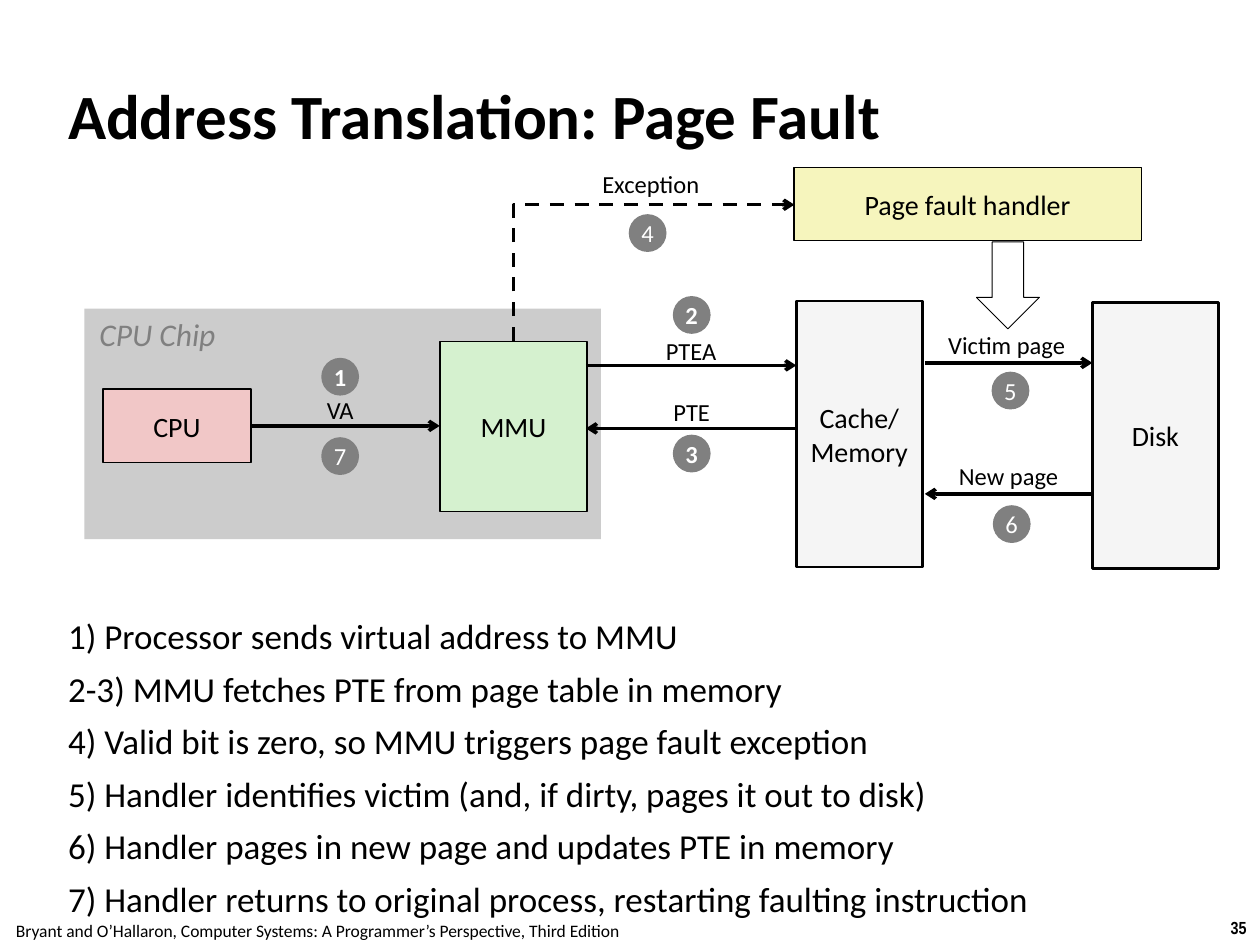
from dataclasses import dataclass
from typing import Optional

import lxml.etree
import pptx
import pptx.dml.color
import pptx.enum.dml
import pptx.enum.shapes
import pptx.enum.text
import pptx.oxml.ns
import pptx.shapes.autoshape
import pptx.shapes.connector
import pptx.slide
import pptx.text.text
import pptx.util

Inches = pptx.util.Inches
RGBColor = pptx.dml.color.RGBColor
ShapeType = pptx.enum.shapes.MSO_SHAPE
ConnectorType = pptx.enum.shapes.MSO_CONNECTOR
Anchor = pptx.enum.text.MSO_ANCHOR
Align = pptx.enum.text.PP_ALIGN
qn = pptx.oxml.ns.qn

BLACK = RGBColor(0x00, 0x00, 0x00)
WHITE = RGBColor(0xFF, 0xFF, 0xFF)
GRAY = RGBColor(0x80, 0x80, 0x80)
CHIP_GRAY = RGBColor(0xCC, 0xCC, 0xCC)
MEMORY_GRAY = RGBColor(0xF5, 0xF5, 0xF5)
GREEN = RGBColor(0xD5, 0xF1, 0xCF)
PINK = RGBColor(0xF1, 0xC7, 0xC7)
YELLOW = RGBColor(0xF6, 0xF5, 0xBD)

BADGE_SIZE = 0.3


@dataclass
class Box:
    left: float
    top: float
    width: float
    height: float
    fill: Optional[RGBColor] = None
    line_width: float = 0
    text: str = ""
    kind: ShapeType = ShapeType.RECTANGLE


@dataclass
class Label:
    text: str
    left: float
    top: float
    width: float
    height: float = 0.33
    size: float = 14
    color: RGBColor = BLACK
    font: str = "Calibri"
    bold: bool = False
    italic: bool = False


@dataclass
class Arrow:
    start_x: float
    end_x: float
    y: float


@dataclass
class Badge:
    number: int
    left: float
    top: float
    bold: bool = False


BOXES = [
    Box(0.67, 2.45, 4.1, 1.83, CHIP_GRAY),
    Box(3.49, 2.71, 1.17, 1.35, GREEN, 1, "MMU"),
    Box(6.32, 2.39, 1, 2.11, MEMORY_GRAY, 1.5, "Cache/\nMemory"),
    Box(0.82, 3.09, 1.17, 0.58, PINK, 1, "CPU"),
    Box(8.67, 2.4, 1, 2.11, MEMORY_GRAY, 1.5, "Disk"),
    Box(6.3, 1.33, 2.76, 0.58, YELLOW, 1, "Page fault handler"),
    Box(7.75, 1.92, 0.5, 0.69, None, 0.5, kind=ShapeType.DOWN_ARROW),
]

ARROWS = [
    Arrow(1.99, 3.49, 3.38),
    Arrow(4.65, 6.32, 2.9),
    Arrow(6.32, 4.65, 3.4),
    Arrow(7.34, 8.67, 2.88),
    Arrow(8.67, 7.34, 3.92),
]

LABELS = [
    Label("35", 9.66, 7.23, 0.34, 0.27, 10, font="Arial Narrow", bold=True),
    Label("Bryant and O’Hallaron, Computer Systems: A Programmer’s Perspective, Third Edition",
          -0.02, 7.25, 5.08, 0.27, 10),
    Label("CPU Chip", 0.67, 2.45, 1.16, 0.4, 18, GRAY, italic=True),
    Label("VA", 2.49, 3.09, 0.42),
    Label("PTEA", 5.18, 2.62, 0.61),
    Label("PTE", 5.24, 3.1, 0.5),
    Label("Victim page", 7.41, 2.57, 1.16),
    Label("New page", 7.5, 3.61, 1.01),
    Label("Exception", 4.67, 1.29, 0.99),
]

BADGES = [
    Badge(1, 2.55, 2.84, True),
    Badge(2, 5.34, 2.35, True),
    Badge(3, 5.34, 3.45, True),
    Badge(4, 4.99, 1.7),
    Badge(5, 7.87, 2.95),
    Badge(6, 7.88, 4.01),
    Badge(7, 2.55, 3.47),
]

STEPS = [
    "1) Processor sends virtual address to MMU",
    "2-3) MMU fetches PTE from page table in memory",
    "4) Valid bit is zero, so MMU triggers page fault exception",
    "5) Handler identifies victim (and, if dirty, pages it out to disk)",
    "6) Handler pages in new page and updates PTE in memory",
    "7) Handler returns to original process, restarting faulting instruction",
]


def add_run(paragraph: pptx.text.text._Paragraph, text: str, size: float, color: RGBColor = BLACK,
            bold: bool = False, italic: bool = False, font: str = "Calibri") -> None:
    run = paragraph.add_run()
    run.text = text
    run.font.name = font
    run.font.size = pptx.util.Pt(size)
    run.font.bold = bold
    run.font.italic = italic
    run.font.color.rgb = color


def write_centered(frame: pptx.text.text.TextFrame, text: str, size: float, color: RGBColor = BLACK,
                   bold: bool = False, italic: bool = False, font: str = "Calibri") -> None:
    frame.word_wrap = False
    frame.vertical_anchor = Anchor.MIDDLE
    for index, line in enumerate(text.split("\n")):
        paragraph = frame.add_paragraph() if index else frame.paragraphs[0]
        paragraph.alignment = Align.CENTER
        add_run(paragraph, line, size, color, bold, italic, font)


def add_box(slide: pptx.slide.Slide, box: Box) -> pptx.shapes.autoshape.Shape:
    shape = slide.shapes.add_shape(box.kind, Inches(box.left), Inches(box.top),
                                   Inches(box.width), Inches(box.height))
    shape.shadow.inherit = False
    if box.fill is None:
        shape.fill.background()
    else:
        shape.fill.solid()
        shape.fill.fore_color.rgb = box.fill
    if box.line_width:
        shape.line.color.rgb = BLACK
        shape.line.width = pptx.util.Pt(box.line_width)
    else:
        shape.line.fill.background()
    if box.text:
        write_centered(shape.text_frame, box.text, 16)
    return shape


def add_label(slide: pptx.slide.Slide, label: Label) -> None:
    text_box = slide.shapes.add_textbox(Inches(label.left), Inches(label.top),
                                        Inches(label.width), Inches(label.height))
    write_centered(text_box.text_frame, label.text, label.size, label.color,
                   label.bold, label.italic, label.font)


def add_badge(slide: pptx.slide.Slide, badge: Badge) -> None:
    circle = add_box(slide, Box(badge.left, badge.top, BADGE_SIZE, BADGE_SIZE, GRAY, kind=ShapeType.OVAL))
    write_centered(circle.text_frame, str(badge.number), 14, WHITE, badge.bold)


def add_arrow(slide: pptx.slide.Slide, kind: ConnectorType, start_x: float, start_y: float,
              end_x: float, end_y: float) -> pptx.shapes.connector.Connector:
    connector = slide.shapes.add_connector(kind, Inches(start_x), Inches(start_y),
                                           Inches(end_x), Inches(end_y))
    connector.line.color.rgb = BLACK
    connector.line.width = pptx.util.Pt(2)
    properties = connector._element.spPr
    lxml.etree.SubElement(properties.find(qn("a:ln")), qn("a:tailEnd"), type="arrow")
    lxml.etree.SubElement(properties, qn("a:effectLst"))
    return connector


def add_exception_arrow(slide: pptx.slide.Slide) -> None:
    connector = add_arrow(slide, ConnectorType.ELBOW, 5.73, 3.28, 4.65, 1.05)
    connector.line.dash_style = pptx.enum.dml.MSO_LINE.DASH
    properties = connector._element.spPr
    properties.find(qn("a:prstGeom")).set("prst", "bentConnector2")
    properties.find(qn("a:xfrm")).set("rot", str(90 * 60000))


def prepare_placeholder(placeholder: pptx.shapes.autoshape.Shape, left: float, top: float,
                        width: float, height: float, anchor: Anchor) -> pptx.text.text.TextFrame:
    placeholder.left, placeholder.top = Inches(left), Inches(top)
    placeholder.width, placeholder.height = Inches(width), Inches(height)
    frame = placeholder.text_frame
    frame.auto_size = pptx.enum.text.MSO_AUTO_SIZE.NONE
    frame.word_wrap = True
    frame.vertical_anchor = anchor
    frame.margin_left = frame.margin_right = frame.margin_top = frame.margin_bottom = Inches(0.04)
    return frame


def fill_placeholders(slide: pptx.slide.Slide) -> None:
    title = prepare_placeholder(slide.shapes.title, 0.5, 0.48, 9.53, 0.86, Anchor.MIDDLE)
    title.paragraphs[0].alignment = Align.LEFT
    add_run(title.paragraphs[0], "Address Translation: Page Fault", 36, bold=True)

    body = prepare_placeholder(slide.placeholders[1], 0.5, 4.92, 8.75, 2.25, Anchor.TOP)
    for index, step in enumerate(STEPS):
        paragraph = body.add_paragraph() if index else body.paragraphs[0]
        paragraph.line_spacing = 0.73
        paragraph.space_before = pptx.util.Pt(12.5)
        properties = paragraph._p.get_or_add_pPr()
        properties.set("marL", str(Inches(0.28)))
        properties.set("indent", str(Inches(-0.28)))
        lxml.etree.SubElement(properties, qn("a:buNone"))
        add_run(paragraph, step, 20)


def main() -> None:
    presentation = pptx.Presentation()
    presentation.slide_width, presentation.slide_height = Inches(10), Inches(7.5)
    slide = presentation.slides.add_slide(presentation.slide_layouts[1])
    fill_placeholders(slide)
    for box in BOXES:
        add_box(slide, box)
    for arrow in ARROWS:
        add_arrow(slide, ConnectorType.STRAIGHT, arrow.start_x, arrow.y, arrow.end_x, arrow.y)
    add_exception_arrow(slide)
    for label in LABELS:
        add_label(slide, label)
    for badge in BADGES:
        add_badge(slide, badge)
    presentation.save("out.pptx")


if __name__ == "__main__":
    main()
